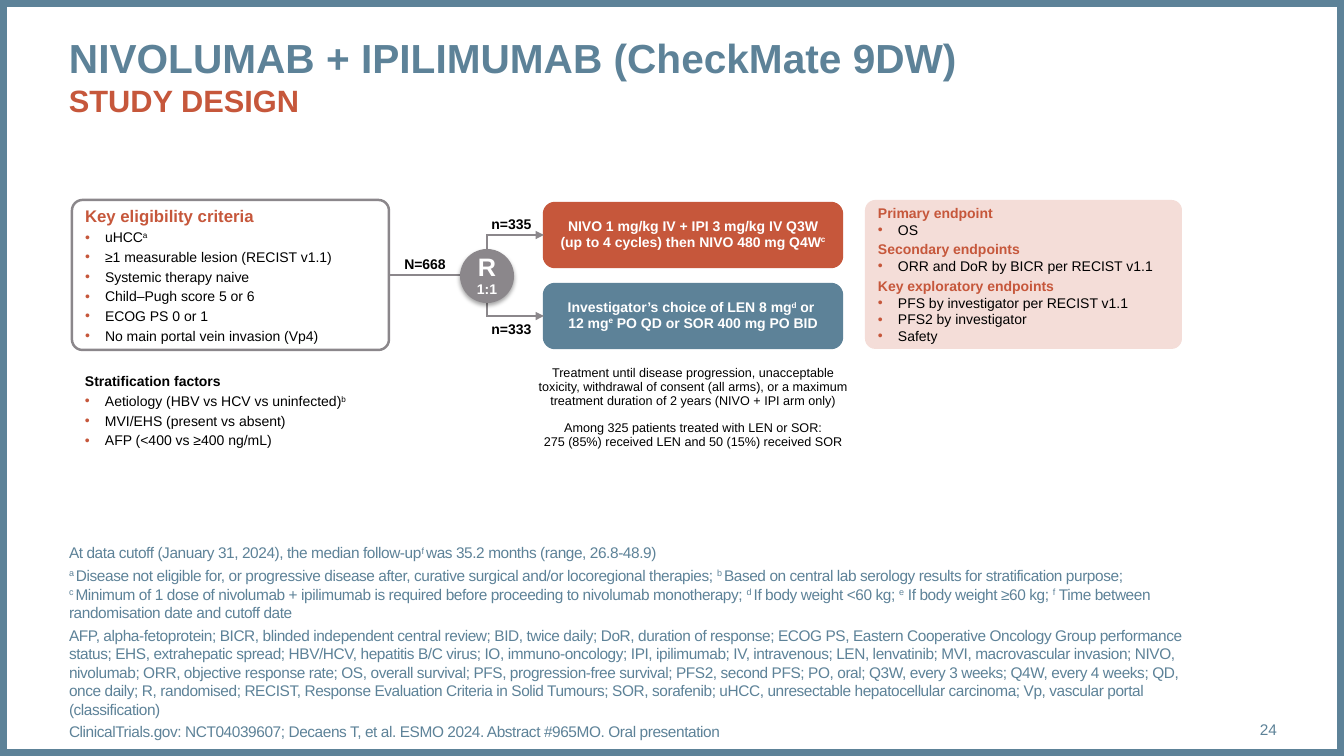
from lxml import etree
from pptx import Presentation
from pptx.dml.color import RGBColor
from pptx.enum.shapes import MSO_CONNECTOR, MSO_SHAPE
from pptx.enum.text import MSO_ANCHOR, PP_ALIGN
from pptx.oxml.ns import qn
from pptx.util import Pt

PX = 9071
RECT, ROUND, OVAL = MSO_SHAPE.RECTANGLE, MSO_SHAPE.ROUNDED_RECTANGLE, MSO_SHAPE.OVAL
STRAIGHT = MSO_CONNECTOR.STRAIGHT
TOP, MIDDLE, BOTTOM = MSO_ANCHOR.TOP, MSO_ANCHOR.MIDDLE, MSO_ANCHOR.BOTTOM
LEFT, CENTER, RIGHT = PP_ALIGN.LEFT, PP_ALIGN.CENTER, PP_ALIGN.RIGHT
BLUE, RUST, GREY, PINK = "5D8298", "C6573B", "8B878B", "F4DDD8"
WHITE, BLACK = "FFFFFF", "000000"
color = RGBColor.from_string

prs = Presentation()
prs.slide_width = 1344 * PX
prs.slide_height = 756 * PX
slide = prs.slides.add_slide(prs.slide_layouts[6])


def add_box(x, y, w, h, kind=None, fill=None, line=None, width=1.75,
            adj=None, anchor=TOP, inset=(0, 0)):
    at = [v * PX for v in (x, y, w, h)]
    if kind is None:
        sp = slide.shapes.add_textbox(*at)
    else:
        sp = slide.shapes.add_shape(kind, *at)
        sp.shadow.inherit = False
        if fill:
            sp.fill.solid()
            sp.fill.fore_color.rgb = color(fill)
        else:
            sp.fill.background()
        if line:
            sp.line.color.rgb = color(line)
            sp.line.width = Pt(width)
        else:
            sp.line.fill.background()
        if adj:
            sp.adjustments[0] = adj
    tf = sp.text_frame
    tf.word_wrap = True
    tf.vertical_anchor = anchor
    tf.margin_left = tf.margin_right = inset[0] * PX
    tf.margin_top = tf.margin_bottom = inset[1] * PX
    return sp


def add_text(sp, text, size=10, fill=BLACK, bold=False, align=LEFT, spacing=None,
             before=0, after=0, bullet=False, tracking=None):
    tf = sp.text_frame
    p = tf.add_paragraph() if tf.paragraphs[0].runs else tf.paragraphs[0]
    if bullet:
        pPr = p._p.get_or_add_pPr()
        pPr.set("marL", str(20 * PX))
        pPr.set("indent", str(-20 * PX))
        bu = etree.SubElement(pPr, qn("a:buClr"))
        etree.SubElement(bu, qn("a:srgbClr"), val=RUST)
        etree.SubElement(pPr, qn("a:buFont"), typeface="Arial")
        etree.SubElement(pPr, qn("a:buChar"), char="•")
    p.alignment = align
    p.space_before = Pt(before)
    p.space_after = Pt(after)
    if spacing:
        p.line_spacing = spacing
    for i, part in enumerate(text.split("^")):
        for j, piece in enumerate(part.split("\n")):
            if j:
                p.add_line_break()
            if not piece:
                continue
            r = p.add_run()
            r.text = piece
            r.font.name = "Arial"
            r.font.size = Pt(size)
            r.font.bold = bold
            r.font.color.rgb = color(fill)
            if i % 2:
                r.font._element.set("baseline", "30000")
            if tracking:
                r.font._element.set("spc", str(tracking))


add_box(0, 0, 1344, 756, RECT, line=BLUE, width=10)

title = add_box(69, 28, 1231, 95, anchor=MIDDLE)
add_text(title, "NIVOLUMAB + IPILIMUMAB (CheckMate 9DW)", size=29, fill=BLUE, bold=True)
add_text(title, "STUDY DESIGN", size=22, fill=RUST, bold=True)

page = add_box(1190, 709, 87, 40, anchor=MIDDLE)
add_text(page, "24", size=11, fill=BLUE, align=RIGHT)

eligibility = add_box(72, 200, 317, 150, ROUND, WHITE, GREY, adj=0.07,
                      anchor=MIDDLE, inset=(10, 5))
add_text(eligibility, "Key eligibility criteria", size=12, fill=RUST, bold=True, after=2)
for item in ("uHCC^a^", "≥1 measurable lesion (RECIST v1.1)", "Systemic therapy naive",
             "Child–Pugh score 5 or 6", "ECOG PS 0 or 1",
             "No main portal vein invasion (Vp4)"):
    add_text(eligibility, item, bullet=True, after=2)

stratification = add_box(85, 373, 304, 77)
add_text(stratification, "Stratification factors", bold=True, after=2)
for item in ("Aetiology (HBV vs HCV vs uninfected)^b^", "MVI/EHS (present vs absent)",
             "AFP (<400 vs ≥400 ng/mL)"):
    add_text(stratification, item, bullet=True, after=2)

arms = []
for i, (fill, text) in enumerate((
        (RUST, "NIVO 1 mg/kg IV + IPI 3 mg/kg IV Q3W (up to 4 cycles) then NIVO 480 mg Q4W^c^"),
        (BLUE, "Investigator’s choice of LEN 8 mg^d^ or \n12 mg^e^ PO QD or SOR 400 mg PO BID"))):
    arm = add_box(544, 203 + 81 * i, 298, 64, ROUND, fill, fill, adj=0.17,
                  anchor=MIDDLE, inset=(10, 5))
    add_text(arm, text, fill=WHITE, bold=True, align=CENTER, spacing=0.9)
    arms.append(arm)

for x1, y1, x2, y2, start, end in ((389, 275, 494, 275, eligibility, None),
                                   (487, 235, 544, 235, None, arms[0]),
                                   (487, 316, 544, 316, None, arms[1]),
                                   (487, 317, 487, 234, None, None)):
    line = slide.shapes.add_connector(STRAIGHT, x1 * PX, y1 * PX, x2 * PX, y2 * PX)
    line.line.color.rgb = color(GREY)
    line.line.width = Pt(2)
    etree.SubElement(line._element.spPr, qn("a:effectLst"))
    if start:
        line.begin_connect(start, 3)
    if end:
        line.end_connect(end, 1)
    if x1 != x2:
        etree.SubElement(line.line._get_or_add_ln(), qn("a:tailEnd"), type="triangle")

circle = add_box(460, 249, 54, 54, OVAL, GREY, anchor=MIDDLE, inset=(0, 5))
effects = circle._element.spPr.find(qn("a:effectLst"))
shadow = etree.SubElement(effects, qn("a:outerShdw"), blurRad=str(Pt(3.1)),
                          dist=str(Pt(1.8)), dir="5400000", algn="t", rotWithShape="0")
shade = etree.SubElement(shadow, qn("a:srgbClr"), val=BLACK)
etree.SubElement(shade, qn("a:alpha"), val="35000")
for text, size in (("R", 18), ("1:1", 10)):
    add_text(circle, text, size=size, fill=WHITE, bold=True, align=CENTER, spacing=0.9)

for x, y, w, text in ((391, 257, 68, "N=668"), (488, 217, 47, "n=335"), (488, 322, 47, "n=333")):
    add_text(add_box(x, y, w, 15), text, bold=True, align=CENTER, spacing=0.9)

treatment = add_box(535, 367, 316, 83)
add_text(treatment, "Treatment until disease progression, unacceptable toxicity, withdrawal of consent "
         "(all arms), or a maximum treatment duration of 2 years (NIVO + IPI arm only)",
         size=9, align=CENTER, spacing=0.9)
add_text(treatment, "Among 325 patients treated with LEN or SOR:\n"
         "275 (85%) received LEN and 50 (15%) received SOR",
         size=9, align=CENTER, spacing=0.9, before=10)

endpoints = add_box(865, 200, 317, 149, ROUND, PINK, adj=0.07, anchor=MIDDLE, inset=(10, 5))
for heading, items, after in (
        ("Primary endpoint", ["OS"], 2),
        ("Secondary endpoints", ["ORR and DoR by BICR per RECIST v1.1"], 2),
        ("Key exploratory endpoints",
         ["PFS by investigator per RECIST v1.1", "PFS2 by investigator", "Safety"], 0)):
    add_text(endpoints, heading, fill=RUST, bold=True)
    for item in items:
        add_text(endpoints, item, bullet=True, after=after)

footnotes = add_box(69, 540, 1122, 201, anchor=BOTTOM)
for i, note in enumerate((
        "At data cutoff (January 31, 2024), the median follow-up^f ^was 35.2 months (range, 26.8-48.9)",
        "^a ^Disease not eligible for, or progressive disease after, curative surgical and/or "
        "locoregional therapies; ^b ^Based on central lab serology results for stratification "
        "purpose; \n^c ^Minimum of 1 dose of nivolumab + ipilimumab is required before proceeding to "
        "nivolumab monotherapy; ^d ^If body weight <60 kg; ^e^ If body weight ≥60 kg; "
        "^f^ Time between randomisation date and cutoff date",
        "AFP, alpha-fetoprotein; BICR, blinded independent central review; BID, twice daily; "
        "DoR, duration of response; ECOG PS, Eastern Cooperative Oncology Group performance status; "
        "EHS, extrahepatic spread; HBV/HCV, hepatitis B/C virus; IO, immuno-oncology; "
        "IPI, ipilimumab; IV, intravenous; LEN, lenvatinib; MVI, macrovascular invasion; "
        "NIVO, nivolumab; ORR, objective response rate; OS, overall survival; "
        "PFS, progression-free survival; PFS2, second PFS; PO, oral; Q3W, every 3 weeks; "
        "Q4W, every 4 weeks; QD, once daily; R, randomised; RECIST, Response Evaluation Criteria "
        "in Solid Tumours; SOR, sorafenib; uHCC, unresectable hepatocellular carcinoma; "
        "Vp, vascular portal (classification)",
        "ClinicalTrials.gov: NCT04039607; Decaens T, et al. ESMO 2024. Abstract #965MO. "
        "Oral presentation")):
    add_text(footnotes, note, size=11, fill=BLUE, before=3 if i else 0, tracking=-30)

prs.save("out.pptx")
